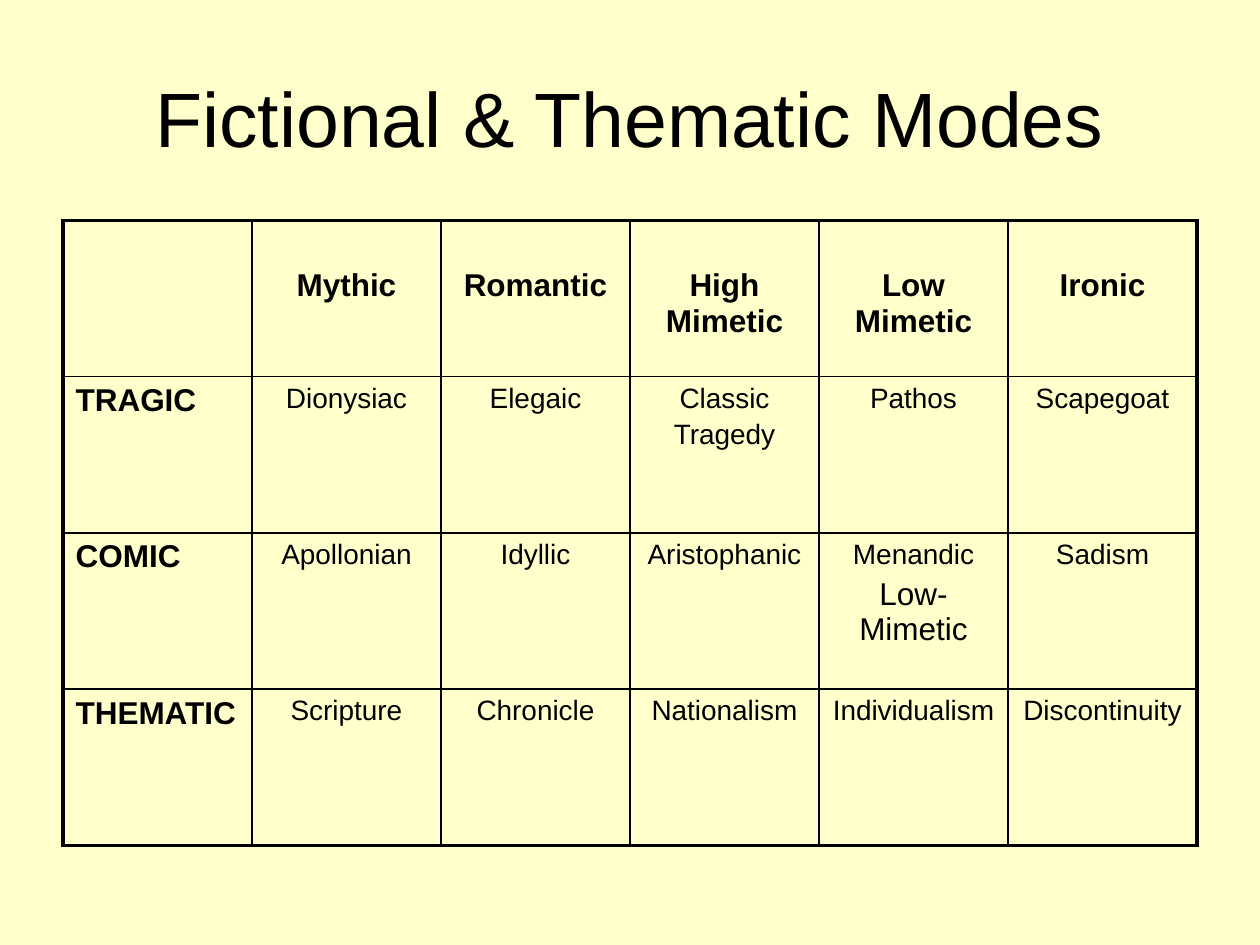
from lxml import etree
from pptx import Presentation
from pptx.dml.color import RGBColor
from pptx.enum.text import MSO_ANCHOR, PP_ALIGN
from pptx.oxml.ns import qn
from pptx.util import Inches, Pt

LEFT, CENTER = PP_ALIGN.LEFT, PP_ALIGN.CENTER
TOP, MIDDLE = MSO_ANCHOR.TOP, MSO_ANCHOR.MIDDLE
COLORS = {"background": "FFFFCC", "ink": "000000"}
FONT = "Arial"
TITLE_ONLY = 5
COL, ROW = 1.5, 1.24
OUTER, INNER = 2.25, 1
HEADER_DROP = 0.38

# A cell is a list of (text, size) paragraphs.
HEADERS = ["Mythic", "Romantic", "High Mimetic", "Low Mimetic", "Ironic"]
MODES = {
    "TRAGIC": [
        [("Dionysiac", 16)], [("Elegaic", 16)],
        [("Classic", 16), ("Tragedy", 16)],
        [("Pathos", 16)], [("Scapegoat", 16)],
    ],
    "COMIC": [
        [("Apollonian", 16)], [("Idyllic", 16)], [("Aristophanic", 16)],
        [("Menandic", 16), ("Low-Mimetic", 18)],
        [("Sadism", 16)],
    ],
    "THEMATIC": [
        [("Scripture", 16)], [("Chronicle", 16)], [("Nationalism", 16)],
        [("Individualism", 16)], [("Discontinuity", 16)],
    ],
}


def write(p, text, size, bold=False, align=CENTER):
    p.alignment = align
    r = p.add_run()
    r.text = text
    r.font.name, r.font.size, r.font.bold = FONT, Pt(size), bold
    r.font.color.rgb = RGBColor.from_string(COLORS["ink"])


def set_borders(cell, widths):
    """Draw left, right, top and bottom lines, widths in points."""
    tc_pr = cell._tc.get_or_add_tcPr()
    for i, (side, width) in enumerate(zip("LRTB", widths)):
        ln = etree.Element(qn(f"a:ln{side}"), w=str(Pt(width)))
        fill = etree.SubElement(ln, qn("a:solidFill"))
        etree.SubElement(fill, qn("a:srgbClr"), val=COLORS["ink"])
        tc_pr.insert(i, ln)


class SlideBuilder:
    def __init__(self, prs):
        self.slide = prs.slides.add_slide(prs.slide_layouts[TITLE_ONLY])
        fill = self.slide.background.fill
        fill.solid()
        fill.fore_color.rgb = RGBColor.from_string(COLORS["background"])

    def title(self, text, left, top, width, height):
        sp = self.slide.shapes.title
        sp.left, sp.top = Inches(left), Inches(top)
        sp.width, sp.height = Inches(width), Inches(height)
        tf = sp.text_frame
        tf.vertical_anchor = MIDDLE
        write(tf.paragraphs[0], text, 44)

    def table(self, rows, left, top):
        n_rows, n_cols = len(rows), len(rows[0])
        table = self.slide.shapes.add_table(
            n_rows, n_cols, Inches(left), Inches(top),
            Inches(n_cols * COL), Inches(n_rows * ROW)).table
        table.first_row = table.horz_banding = False
        for i, row in enumerate(rows):
            for j, lines in enumerate(row):
                cell = table.cell(i, j)
                self.fill_cell(cell, lines, bold=i == 0 or j == 0,
                               align=CENTER if j else LEFT)
                if i == 0:
                    cell.margin_top = Inches(HEADER_DROP)
                edges = (j == 0, j == n_cols - 1, i == 0, i == n_rows - 1)
                set_borders(cell, [OUTER if e else INNER for e in edges])

    def fill_cell(self, cell, lines, **style):
        cell.fill.background()
        cell.vertical_anchor = TOP
        tf = cell.text_frame
        for k, (text, size) in enumerate(lines):
            p = tf.add_paragraph() if k else tf.paragraphs[0]
            if k:
                p.space_before = Pt(0.2 * size)
            write(p, text, size, **style)


def main():
    prs = Presentation()
    prs.slide_width, prs.slide_height = Inches(10), Inches(7.5)
    builder = SlideBuilder(prs)
    builder.title("Fictional & Thematic Modes", 0.5, 0.3, 9, 1.25)
    header = [[]] + [[(text, 18)] for text in HEADERS]
    body = [[[(name, 18)]] + cells for name, cells in MODES.items()]
    builder.table([header] + body, 0.5, 1.75)
    prs.save("out.pptx")


if __name__ == "__main__":
    main()
